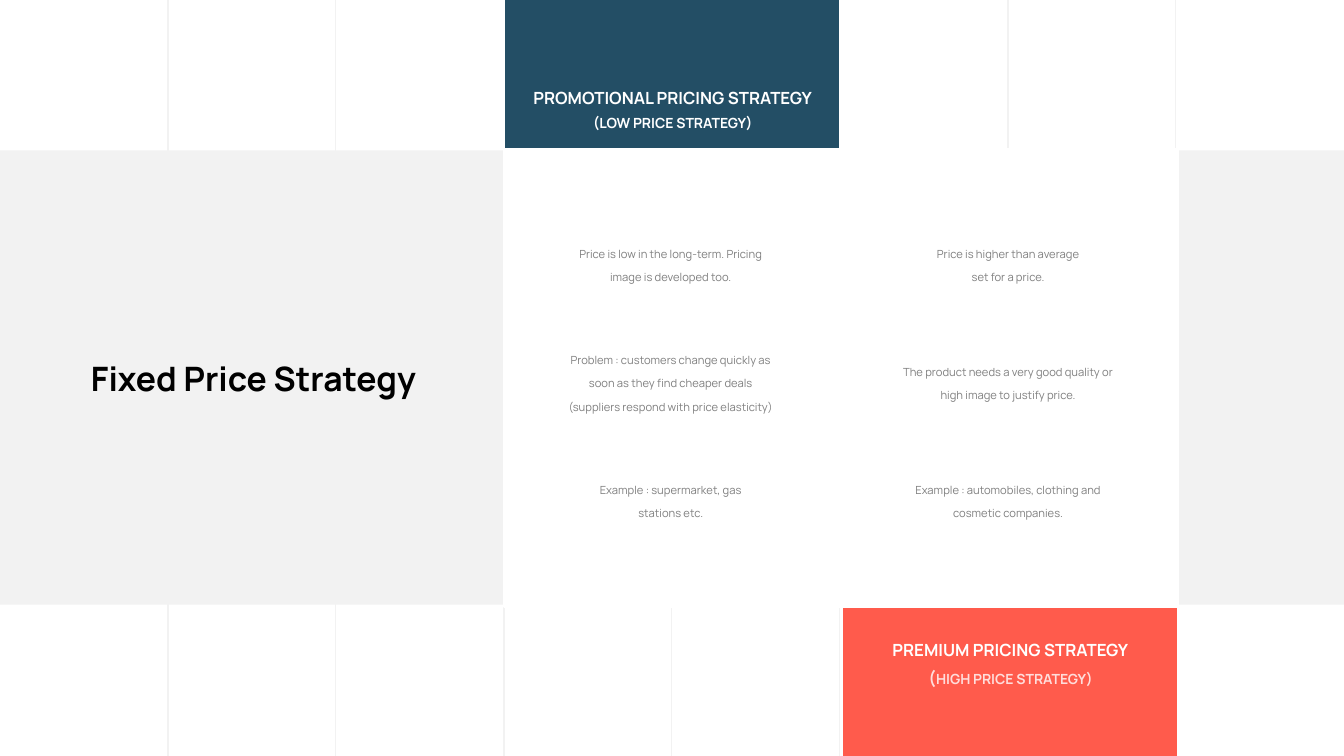
from lxml.etree import SubElement
from pptx import Presentation
from pptx.dml.color import RGBColor
from pptx.enum.shapes import MSO_CONNECTOR, MSO_SHAPE
from pptx.enum.text import MSO_ANCHOR, MSO_AUTO_SIZE, PP_ALIGN
from pptx.oxml.ns import qn
from pptx.util import Pt

W, H = 960, 540
CARD_Y, CARD_H = 106.6, 326.4
NAVY, CORAL, WHITE, BAND = "234E65", "FF5B4C", "FFFFFF", "F2F2F2"


def color(hex_value):
    return RGBColor.from_string(hex_value)


def rect(s, box, fill, line=None):
    sp = s.shapes.add_shape(MSO_SHAPE.RECTANGLE, *map(Pt, box))
    sp.shadow.inherit = False
    sp.fill.solid()
    sp.fill.fore_color.rgb = color(fill)
    if line:
        sp.line.color.rgb = color(line)
        sp.line.width = Pt(2)
    else:
        sp.line.fill.background()
    return sp


def set_frame(tf, anchor, side=0):
    tf.word_wrap = True
    tf.auto_size = MSO_AUTO_SIZE.NONE
    tf.vertical_anchor = anchor
    tf.margin_left = tf.margin_right = Pt(side)
    tf.margin_top = tf.margin_bottom = 0


def style(r, size, fill, bold=False):
    r.font.name = "Manrope"
    r.font.size = Pt(size)
    r.font.bold = bold
    r.font.color.rgb = color(fill)


def center(p, spacing, size):
    p.alignment = PP_ALIGN.CENTER
    p.line_spacing = spacing
    for br in p._p.findall(qn("a:br")):
        SubElement(br, qn("a:rPr"), sz=str(size * 100))


def grid(s):
    for i in range(1, 8):
        x = Pt(i * W / 8)
        line = s.shapes.add_connector(MSO_CONNECTOR.STRAIGHT, x, 0, x, Pt(H))
        line.line.color.rgb = color(BAND)
        line.line.width = Pt(0.75)
        SubElement(line._element.spPr, qn("a:effectLst"))


def title_band(s, box, text):
    x, y, w, h = box
    rect(s, box, BAND)
    title = s.shapes.title
    s.shapes._spTree.append(title._element)
    title.left, title.top = Pt(x + 65), Pt(y + 146)
    title.width, title.height = Pt(263), Pt(33)
    tf = title.text_frame
    set_frame(tf, MSO_ANCHOR.MIDDLE)
    tf.text = text
    p = tf.paragraphs[0]
    p.alignment = PP_ALIGN.LEFT
    p.line_spacing = 1
    style(p.runs[0], 24, "000000", True)


def heading(s, box, runs):
    tf = s.shapes.add_textbox(*map(Pt, box)).text_frame
    set_frame(tf, MSO_ANCHOR.TOP)
    p = tf.paragraphs[0]
    for i, (text, size, fill) in enumerate(runs):
        if i == 1:
            p.add_line_break()
        r = p.add_run()
        r.text = text
        style(r, size, fill, True)
    center(p, 1.4, 12)


def strategy(s, box, fill, heading_box, runs, notes):
    x, y, w, h = box
    rect(s, box, fill, WHITE)
    rect(s, (x, CARD_Y, w, CARD_H), WHITE, WHITE)
    heading(s, heading_box, runs)
    for i, text in enumerate(notes):
        note_box = (x + 24.5, CARD_Y + 46.8 + i * 84.2, 189.4, 65.5)
        tf = rect(s, note_box, WHITE).text_frame
        set_frame(tf, MSO_ANCHOR.MIDDLE, 17.3)
        tf.text = text
        p = tf.paragraphs[0]
        for r in p.runs:
            style(r, 8, "7F7F7F")
        center(p, 1.73, 8)


def main():
    prs = Presentation()
    prs.slide_width, prs.slide_height = Pt(W), Pt(H)
    s = prs.slides.add_slide(prs.slide_layouts[5])
    grid(s)
    title_band(s, (0, 107.5, W, 324.5), "Fixed Price Strategy")
    strategy(
        s, (601, CARD_Y, 240.5, 435.6), CORAL, (630.7, 451.4, 182.2, 33.8),
        [("PREMIUM PRICING STRATEGY", 12, WHITE),
         ("(", 12, "FFDDDB"),
         ("HIGH PRICE STRATEGY)", 10, "FFDDDB")],
        ["Price is higher than average\vset for a price.",
         "The product needs a very good quality or high image to justify price.",
         "Example : automobiles, clothing and cosmetic companies."])
    strategy(
        s, (360, -1.5, 240.5, 433.5), NAVY, (375.1, 56.9, 211, 33.1),
        [("PROMOTIONAL PRICING STRATEGY", 12, WHITE),
         ("(LOW PRICE STRATEGY)", 10, WHITE)],
        ["Price is low in the long-term. Pricing image is developed too.",
         "Problem : customers change quickly as soon as they find cheaper deals "
         "(suppliers respond with price elasticity)",
         "Example : supermarket, gas\vstations etc."])
    prs.save("out.pptx")


if __name__ == "__main__":
    main()
